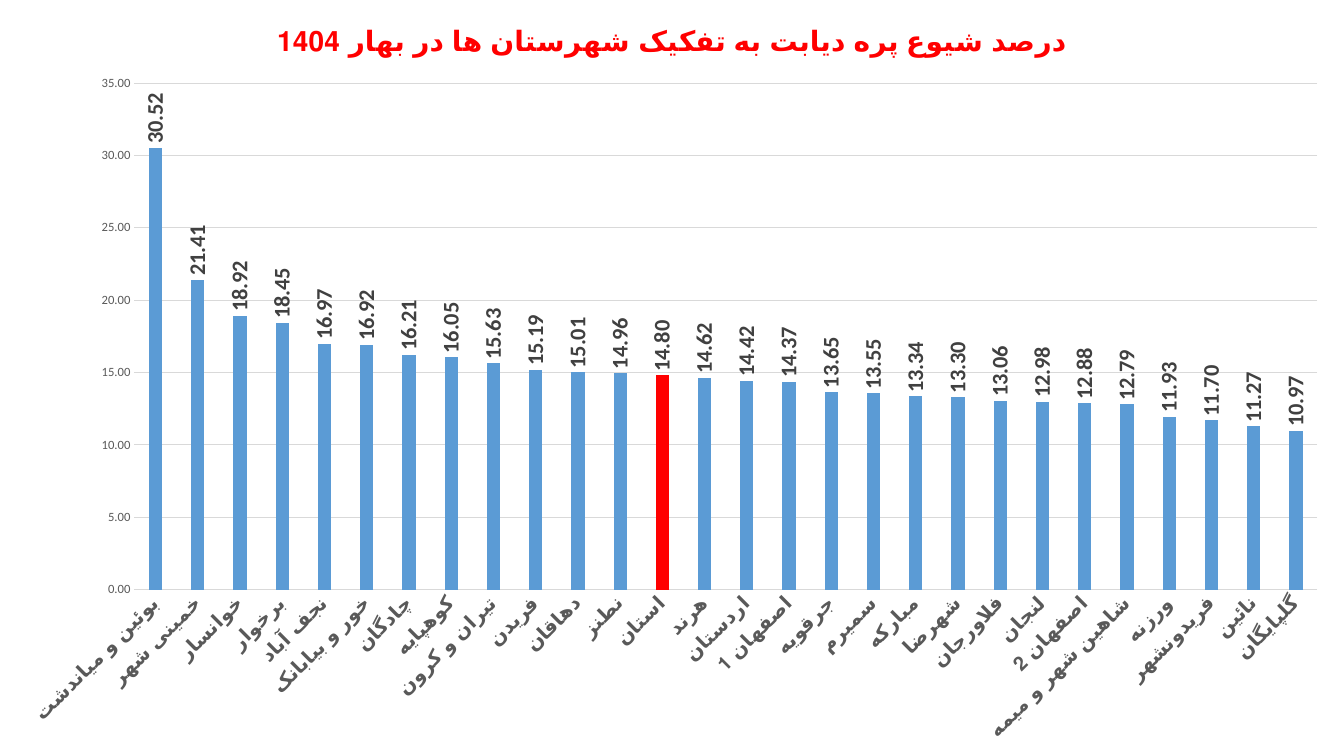
from typing import NamedTuple

from lxml import etree
from pptx import Presentation
from pptx.chart.data import CategoryChartData
from pptx.dml.color import RGBColor
from pptx.enum.chart import XL_CHART_TYPE as ChartType
from pptx.enum.chart import XL_LABEL_POSITION as LabelPos
from pptx.enum.chart import XL_TICK_MARK as Tick
from pptx.oxml.ns import qn
from pptx.util import Cm, Pt

FONT = "Calibri"
BLUE, RED, GRID = "5B9BD5", "FF0000", "D9D9D9"
TITLE = "درصد شیوع پره دیابت به تفکیک شهرستان ها در بهار 1404"
PROVINCE = "استان"


class County(NamedTuple):
    name: str
    rate: float


COUNTIES = [
    County("بوئین و میاندشت", 30.52),
    County("خمینی شهر", 21.41),
    County("خوانسار", 18.92),
    County("برخوار", 18.45),
    County("نجف آباد", 16.97),
    County("خور و بیابانک", 16.92),
    County("چادگان", 16.21),
    County("کوهپایه", 16.05),
    County("تیران و کرون", 15.63),
    County("فریدن", 15.19),
    County("دهاقان", 15.01),
    County("نطنز", 14.96),
    County(PROVINCE, 14.80),
    County("هرند", 14.62),
    County("اردستان", 14.42),
    County("اصفهان 1", 14.37),
    County("جرقویه", 13.65),
    County("سمیرم", 13.55),
    County("مبارکه", 13.34),
    County("شهرضا", 13.30),
    County("فلاورجان", 13.06),
    County("لنجان", 12.98),
    County("اصفهان 2", 12.88),
    County("شاهین شهر و میمه", 12.79),
    County("ورزنه", 11.93),
    County("فریدونشهر", 11.70),
    County("نائین", 11.27),
    County("گلپایگان", 10.97),
]


def rgb(color: str) -> RGBColor:
    return RGBColor.from_string(color)


def style_font(font, size: float, color: str, bold: bool = False) -> None:
    font.name, font.size, font.bold = FONT, Pt(size), bold
    font.color.rgb = rgb(color)


def style_line(line, color: str) -> None:
    line.width = Pt(0.75)
    line.color.rgb = rgb(color)


def rotate_text(chart, parent: str, degrees: int) -> None:
    for body in chart._chartSpace.xpath(f".//{parent}/c:txPr/a:bodyPr"):
        body.set("rot", str(degrees * 60000))
        body.set("vert", "horz")


def place_plot(chart, x: float, y: float, w: float, h: float) -> None:
    """Fix the inner plot area, in fractions of the chart."""
    area = chart._chartSpace.xpath(".//c:plotArea")[0]
    for old in area.findall(qn("c:layout")):
        area.remove(old)
    layout = etree.Element(qn("c:layout"))
    manual = etree.SubElement(layout, qn("c:manualLayout"))
    settings = {"layoutTarget": "inner", "xMode": "edge", "yMode": "edge",
                "x": x, "y": y, "w": w, "h": h}
    for tag, value in settings.items():
        etree.SubElement(manual, qn(f"c:{tag}")).set("val", str(value))
    area.insert(0, layout)


def add_title(chart) -> None:
    p = chart.chart_title.text_frame.paragraphs[0]
    p._p.get_or_add_pPr().set("rtl", "1")
    r = p.add_run()
    r.text = TITLE
    style_font(r.font, 20, RED, bold=True)
    chart.chart_title.include_in_layout = False


def style_axes(chart) -> None:
    cat, val = chart.category_axis, chart.value_axis
    for axis in (cat, val):
        axis.major_tick_mark = axis.minor_tick_mark = Tick.NONE
    style_font(cat.tick_labels.font, 14, "595959", bold=True)
    style_line(cat.format.line, GRID)
    rotate_text(chart, "c:catAx", -45)

    val.minimum_scale, val.maximum_scale, val.major_unit = 0, 35, 5
    style_font(val.tick_labels.font, 9, "595959")
    val.tick_labels.number_format = "0.00"
    val.tick_labels.number_format_is_linked = False
    val.format.line.fill.background()
    style_line(val.major_gridlines.format.line, GRID)


def style_bars(chart) -> None:
    plot = chart.plots[0]
    plot.gap_width, plot.overlap = 219, -27
    plot.vary_by_categories = False
    series = plot.series[0]
    series.invert_if_negative = False
    fill = series.format.fill
    fill.solid()
    fill.fore_color.rgb = rgb(BLUE)

    # The province average stands out
    index = [county.name for county in COUNTIES].index(PROVINCE)
    fill = series.points[index].format.fill
    fill.solid()
    fill.fore_color.rgb = rgb(RED)

    labels = series.data_labels
    labels.show_value = True
    labels.position = LabelPos.OUTSIDE_END
    labels.number_format = "0.00"
    labels.number_format_is_linked = False
    style_font(labels.font, 16, "404040", bold=True)
    rotate_text(chart, "c:dLbls", -90)


def main() -> None:
    prs = Presentation()
    prs.slide_width, prs.slide_height = Cm(33.87), Cm(19.05)
    s = prs.slides.add_slide(prs.slide_layouts[6])

    # Chart over the whole slide
    data = CategoryChartData(number_format="0.00")
    data.categories = [county.name for county in COUNTIES]
    data.add_series("Series 1", [county.rate for county in COUNTIES])
    chart = s.shapes.add_chart(ChartType.COLUMN_CLUSTERED, 0, 0,
                               prs.slide_width, prs.slide_height, data).chart
    style_font(chart.font, 10, "000000")
    chart.has_legend = False
    add_title(chart)
    style_axes(chart)
    style_bars(chart)
    place_plot(chart, 0.1, 0.11, 0.88, 0.67)

    prs.save("out.pptx")


if __name__ == "__main__":
    main()
